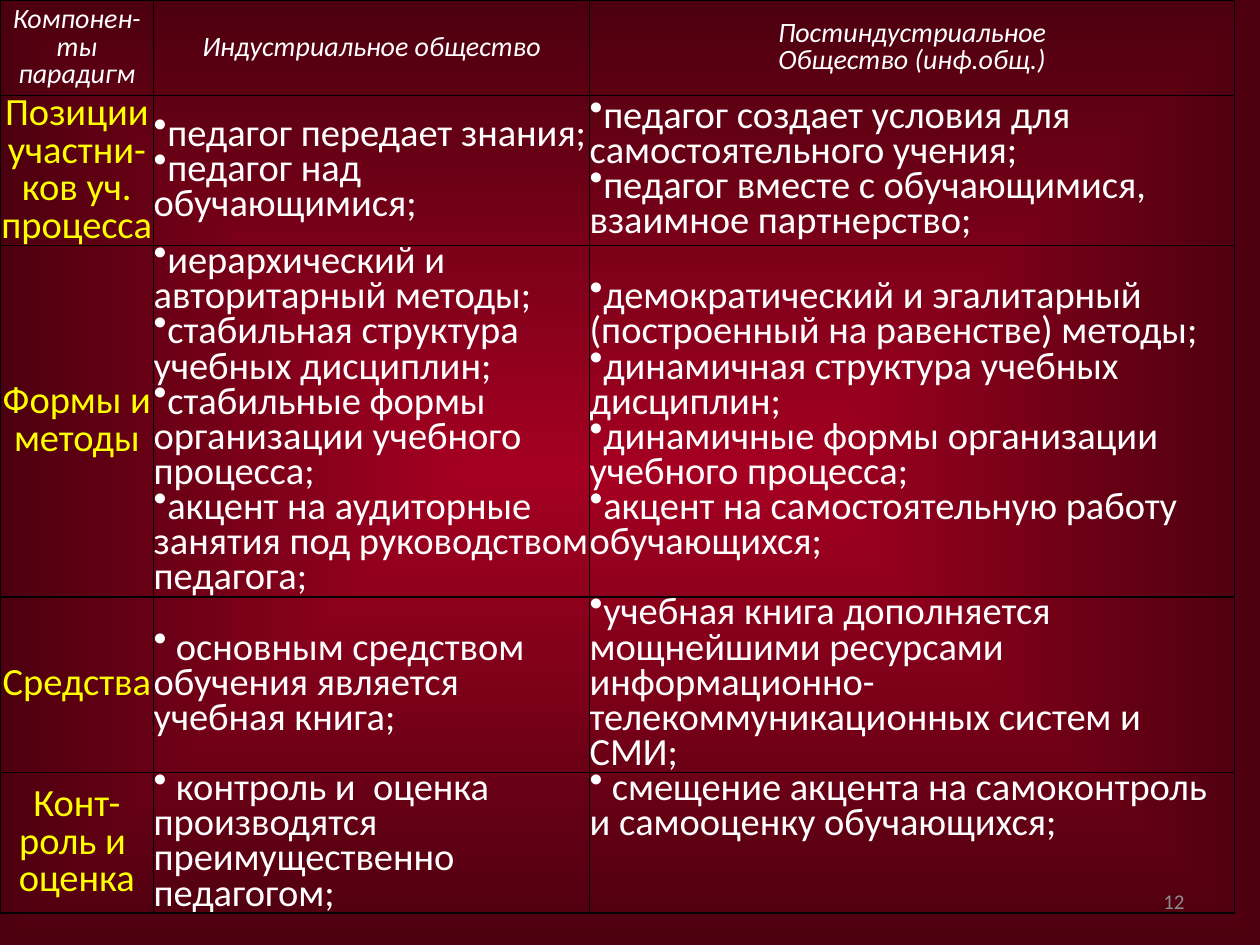
from pptx import Presentation
from pptx import util as u
from pptx.dml.color import RGBColor
from pptx.enum import text
from pptx.oxml import parse_xml
from pptx.oxml.ns import nsdecls, qn

WHITE = RGBColor(0xFF, 0xFF, 0xFF)
YELLOW = RGBColor(0xFF, 0xFF, 0x00)
GREY = RGBColor(0x8C, 0x8C, 0x8C)
CRIMSON = RGBColor(0xA5, 0x00, 0x21)
MAROON = RGBColor(0x4C, 0x00, 0x0F)
FONT = "Calibri"

# Content: each cell is a list of paragraphs
HEADER = [
    ["Компонен-ты парадигм"],
    ["Индустриальное общество"],
    ["Постиндустриальное", "Общество (инф.общ.)"],
]
ROWS = [
    (["Позиции участни-ков уч. процесса"],
     ["педагог передает знания;", "педагог над обучающимися;"],
     ["педагог создает условия для самостоятельного учения;",
      "педагог вместе с обучающимися, взаимное партнерство;"]),
    (["Формы и методы"],
     ["иерархический и авторитарный методы;",
      "стабильная структура учебных дисциплин;",
      "стабильные формы организации учебного процесса;",
      "акцент на аудиторные занятия под руководством педагога;"],
     ["демократический и эгалитарный (построенный на равенстве) методы;",
      "динамичная структура учебных дисциплин;",
      "динамичные формы организации учебного процесса;",
      "акцент на самостоятельную работу обучающихся;"]),
    (["Средства"],
     [" основным средством обучения является учебная книга;"],
     ["учебная книга дополняется мощнейшими ресурсами "
      "информационно-телекоммуникационных систем и  СМИ;"]),
    (["Конт-роль и \vоценка"],
     [" контроль и  оценка производятся преимущественно педагогом;"],
     [" смещение акцента на самоконтроль и самооценку обучающихся;"]),
]
COLUMN_WIDTHS = [1.22, 3.46, 5.12]
ROW_HEIGHTS = [0.76, 1.04, 2.52, 1.1, 1.07]


def write(frame, lines, size, color, italic=False, align=None, spacing=None, bullet=False):
    for index, line in enumerate(lines):
        para = frame.add_paragraph() if index else frame.paragraphs[0]
        para.text = line
        para.alignment = align
        para.line_spacing = spacing
        if bullet:
            para._p.get_or_add_pPr().append(
                parse_xml(f'<a:buChar {nsdecls("a")} char="•"/>'))
        for span in para.runs:
            span.font.name = FONT
            span.font.size = u.Pt(size)
            span.font.italic = italic
            span.font.color.rgb = color


def add_borders(cell):
    properties = cell._tc.get_or_add_tcPr()
    for side in "LRTB":
        properties.append(parse_xml(
            f'<a:ln{side} {nsdecls("a")} w="12700"><a:solidFill>'
            f'<a:srgbClr val="000000"/></a:solidFill></a:ln{side}>'))


deck = Presentation()
deck.slide_width, deck.slide_height = u.Inches(10), u.Inches(7.5)
page = deck.slides.add_slide(deck.slide_layouts[6])

# Background: gradient spreading from the centre
backdrop = page.background.fill
backdrop.gradient()
for stop, color, position in zip(backdrop.gradient_stops, (CRIMSON, MAROON), (0, 1)):
    stop.color.rgb = color
    stop.position = position
direction = next(page._element.iter(qn("a:lin")))
direction.getparent().replace(direction, parse_xml(
    f'<a:path {nsdecls("a")} path="shape">'
    '<a:fillToRect l="50000" t="50000" r="50000" b="50000"/></a:path>'))

# Comparison table
table = page.shapes.add_table(
    len(ROW_HEIGHTS), len(COLUMN_WIDTHS), 0, 0,
    u.Inches(sum(COLUMN_WIDTHS)), u.Inches(sum(ROW_HEIGHTS))).table
table.first_row = table.horz_banding = False
for column, width in zip(table.columns, COLUMN_WIDTHS):
    column.width = u.Inches(width)
for row, height in zip(table.rows, ROW_HEIGHTS):
    row.height = u.Inches(height)

label = dict(align=text.PP_ALIGN.CENTER, spacing=0.8)
for r, entries in enumerate([HEADER, *ROWS]):
    for c, lines in enumerate(entries):
        cell = table.cell(r, c)
        cell.margin_left = cell.margin_right = cell.margin_top = cell.margin_bottom = 0
        cell.vertical_anchor = text.MSO_ANCHOR.MIDDLE
        add_borders(cell)
        cell.fill.background()
        if r == 0:
            write(cell.text_frame, lines, 16, WHITE, italic=True, **label)
        elif c == 0:
            write(cell.text_frame, lines, 22, YELLOW, **label)
        else:
            write(cell.text_frame, lines, 22, WHITE, spacing=0.75, bullet=True)
table.cell(len(ROWS), 2).vertical_anchor = text.MSO_ANCHOR.TOP

# Page number
box = page.shapes.add_textbox(u.Inches(7.17), u.Inches(6.95), u.Inches(2.33), u.Inches(0.4))
box.text_frame.word_wrap = True
box.text_frame.vertical_anchor = text.MSO_ANCHOR.MIDDLE
write(box.text_frame, ["12"], 12, GREY, align=text.PP_ALIGN.RIGHT)

deck.save("out.pptx")
